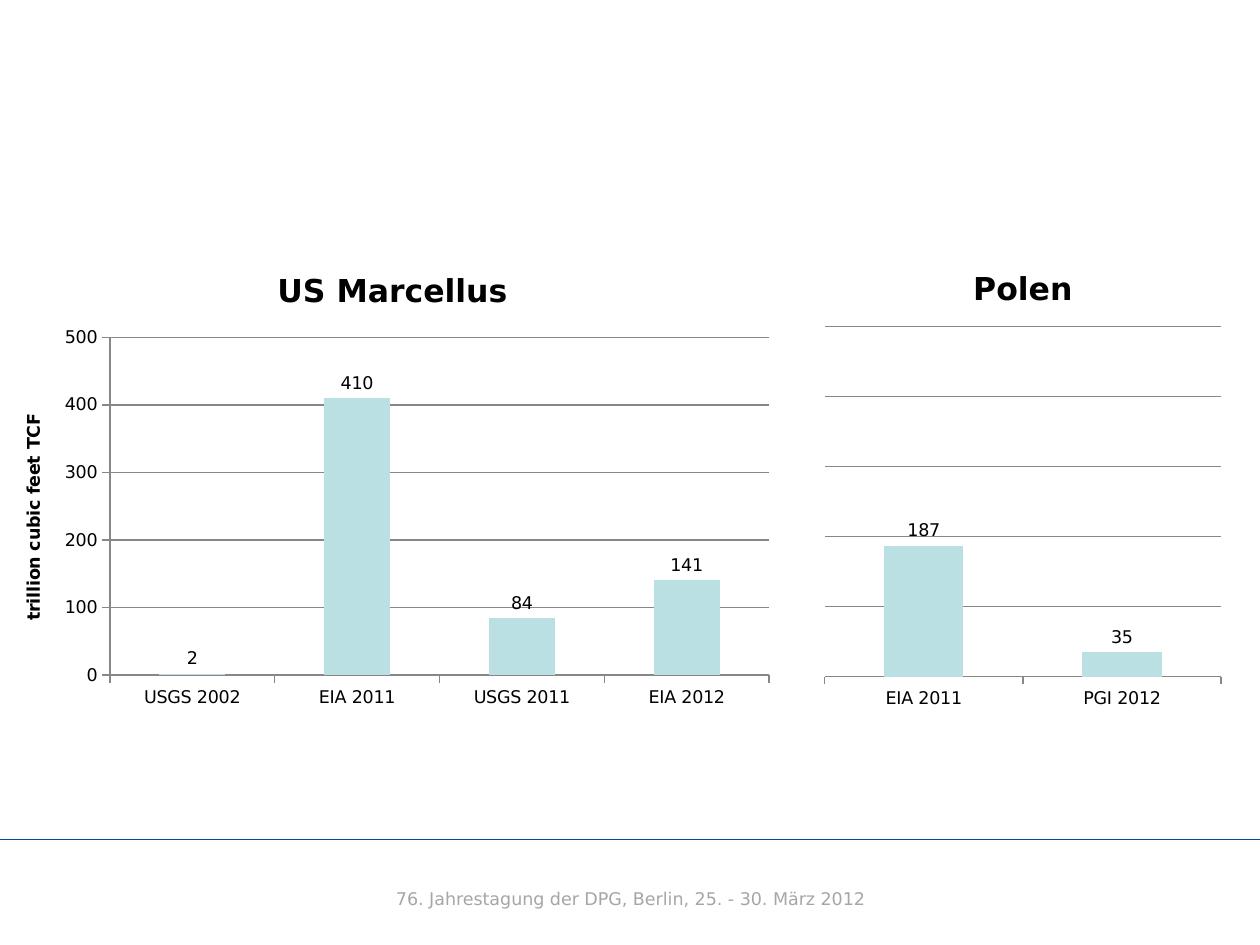
from dataclasses import dataclass
from typing import Any

from lxml.etree import SubElement
from pptx import Presentation
from pptx.chart.data import CategoryChartData as Data
from pptx.dml.color import RGBColor as Rgb
from pptx.enum.chart import XL_CHART_TYPE as Kind
from pptx.enum.chart import XL_LABEL_POSITION as Spot
from pptx.enum.chart import XL_TICK_MARK as Tick
from pptx.enum.shapes import MSO_CONNECTOR as Conn
from pptx.enum.text import MSO_ANCHOR as Anchor
from pptx.enum.text import PP_ALIGN as Align
from pptx.oxml.ns import qn
from pptx.util import Pt


@dataclass(frozen=True)
class Theme:
    face: str = "DejaVu Sans"
    ink: Rgb = Rgb(0, 0, 0)
    bar: Rgb = Rgb(0xBB, 0xE0, 0xE3)
    grid: Rgb = Rgb(0x87, 0x87, 0x87)
    rule: Rgb = Rgb(0x00, 0x4D, 0x95)
    mute: Rgb = Rgb(0xA6, 0xA6, 0xA6)
    head: float = 18
    body: float = 10


@dataclass(frozen=True)
class Panel:
    title: str
    box: tuple[float, float, float, float]
    plot: tuple[float, float, float, float]  # fractions of the box
    bars: dict[str, int]
    unit: str = ""  # without a unit the value axis is hidden


THEME = Theme()
PANELS = [
    Panel("US Marcellus", (0, 142, 448.5, 268), (0.14, 0.19, 0.84, 0.72),
          {"USGS 2002": 2, "EIA 2011": 410, "USGS 2011": 84, "EIA 2012": 141},
          "trillion cubic feet TCF"),
    Panel("Polen", (466.5, 140.5, 236, 270.5), (0.02, 0.17, 0.96, 0.74),
          {"EIA 2011": 187, "PGI 2012": 35}),
]


def apply(obj: Any, **form: Any) -> None:
    for key, val in form.items():
        setattr(obj, key, val)


def style(font: Any, size: float, color: Rgb, bold: bool = False) -> None:
    apply(font, name=THEME.face, size=Pt(size), bold=bold)
    font.color.rgb = color


def stroke(line: Any, color: Rgb, width: float) -> None:
    line.color.rgb = color
    line.width = Pt(width)


def caption(owner: Any, text: str, size: float) -> None:
    """Write a bold title on a chart or an axis."""
    frame = owner.text_frame
    frame.text = text
    style(frame.paragraphs[0].runs[0].font, size, THEME.ink, True)


def place(chart: Any, plot: tuple[float, ...]) -> None:
    """Fix the inner plot area inside the chart."""
    area = chart.element.find(".//" + qn("c:plotArea"))
    for old in area.findall(qn("c:layout")):
        area.remove(old)
    layout = SubElement(area, qn("c:layout"))
    area.insert(0, layout)
    manual = SubElement(layout, qn("c:manualLayout"))
    parts = {"layoutTarget": "inner", "xMode": "edge", "yMode": "edge",
             **dict(zip("xywh", plot))}
    for key, val in parts.items():
        SubElement(manual, qn(f"c:{key}")).set("val", str(val))


def draw(slide: Any, panel: Panel) -> None:
    data = Data()
    data.categories = list(panel.bars)
    data.add_series("Series 1", list(panel.bars.values()))
    box = map(Pt, panel.box)
    chart = slide.shapes.add_chart(Kind.COLUMN_CLUSTERED, *box, data).chart
    apply(chart, has_legend=False, has_title=True)
    style(chart.font, THEME.body, THEME.ink)
    caption(chart.chart_title, panel.title, THEME.head)
    place(chart, panel.plot)

    # Bars and their values
    bars = chart.plots[0]
    apply(bars, gap_width=150, vary_by_categories=False, has_data_labels=True)
    apply(bars.data_labels, show_value=True, position=Spot.OUTSIDE_END)
    style(bars.data_labels.font, THEME.body, THEME.ink)
    fill = bars.series[0].format.fill
    fill.solid()
    fill.fore_color.rgb = THEME.bar

    # Axes and grid
    cat, val = chart.category_axis, chart.value_axis
    apply(val, minimum_scale=0, maximum_scale=500, major_unit=100,
          has_major_gridlines=True, visible=bool(panel.unit))
    for axis in (cat, val):
        apply(axis, major_tick_mark=Tick.OUTSIDE, minor_tick_mark=Tick.NONE)
        stroke(axis.format.line, THEME.grid, 0.75)
    stroke(val.major_gridlines.format.line, THEME.grid, 0.75)
    if panel.unit:
        caption(val.axis_title, panel.unit, THEME.body)


def footer(slide: Any, text: str) -> None:
    rule = slide.shapes.add_connector(
        Conn.STRAIGHT, Pt(0), Pt(479.5), Pt(720), Pt(479.5))
    stroke(rule.line, THEME.rule, 0.5)
    SubElement(rule.element.spPr, qn("a:effectLst"))

    note = slide.shapes.add_textbox(Pt(196), Pt(504), Pt(328.5), Pt(19.5))
    frame = note.text_frame
    apply(frame, word_wrap=True, vertical_anchor=Anchor.TOP, text=text)
    para = frame.paragraphs[0]
    para.alignment = Align.CENTER
    style(para.runs[0].font, THEME.body, THEME.mute)


def main() -> None:
    deck = Presentation()
    apply(deck, slide_width=Pt(720), slide_height=Pt(540))
    slide = deck.slides.add_slide(deck.slide_layouts[6])
    for panel in PANELS:
        draw(slide, panel)
    footer(slide, "76. Jahrestagung der DPG, Berlin, 25. - 30. März 2012")
    deck.save("out.pptx")


if __name__ == "__main__":
    main()
